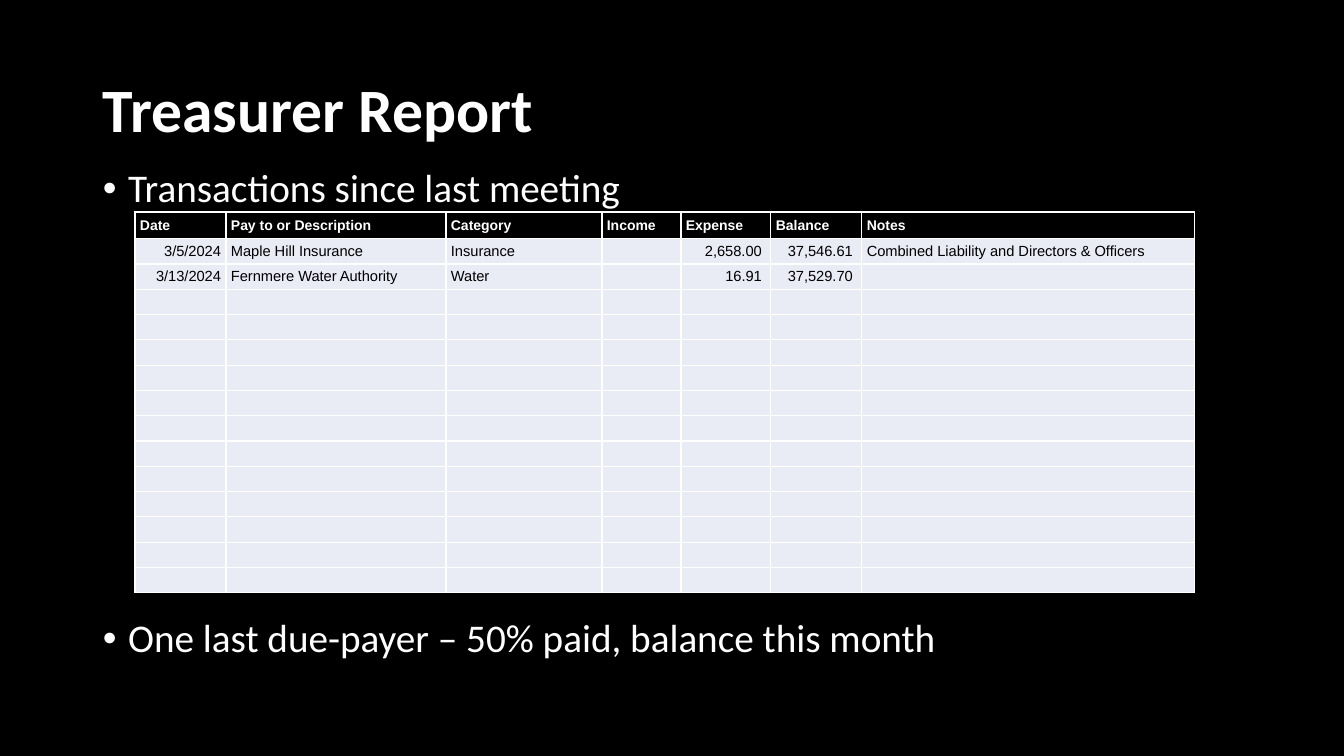
from lxml.etree import SubElement
from pptx import Presentation
from pptx.dml.color import RGBColor
from pptx.enum.text import MSO_ANCHOR, PP_ALIGN
from pptx.oxml.ns import qn
from pptx.util import Inches, Pt

TITLE = "Treasurer Report"
POINTS = [
    ("Transactions since last meeting", 10),
    ("One last due-payer – 50% paid, balance this month", 291),
]
COLS = [
    ("Date", 91, PP_ALIGN.RIGHT),
    ("Pay to or Description", 220, PP_ALIGN.LEFT),
    ("Category", 156, PP_ALIGN.LEFT),
    ("Income", 79, PP_ALIGN.RIGHT),
    ("Expense", 90, PP_ALIGN.RIGHT),
    ("Balance", 91, PP_ALIGN.RIGHT),
    ("Notes", 333, PP_ALIGN.LEFT),
]
ENTRIES = [
    ("3/5/2024", "Maple Hill Insurance", "Insurance", "", "2,658.00 ",
     "37,546.61 ", "Combined Liability and Directors & Officers"),
    ("3/13/2024", "Fernmere Water Authority", "Water", "", "16.91 ",
     "37,529.70 ", ""),
]
LINES = 14
HEAD, HEIGHT = 26, 380
INSET = 5

BLACK = RGBColor(0x00, 0x00, 0x00)
WHITE = RGBColor(0xFF, 0xFF, 0xFF)
PALE = RGBColor(0xE9, 0xEB, 0xF5)
SCALE = Inches(7.5) / 756


def px(n):
    return round(n * SCALE)


def write(para, text, size, font, color, bold=False):
    run = para.add_run()
    run.text = text
    run.font.size = Pt(size)
    run.font.name = font
    run.font.bold = bold
    run.font.color.rgb = color


def add_box(slide, x, y, w, h, anchor):
    box = slide.shapes.add_textbox(px(x), px(y), px(w), px(h))
    frame = box.text_frame
    frame.word_wrap = True
    frame.vertical_anchor = anchor
    return frame


def add_bullet(para):
    props = para._p.get_or_add_pPr()
    props.set("marL", str(Inches(0.25)))
    props.set("indent", str(-Inches(0.25)))
    SubElement(props, qn("a:buFont"), typeface="Arial")
    SubElement(props, qn("a:buChar"), char="•")


def add_edges(cell):
    props = cell._tc.get_or_add_tcPr()
    for i, side in enumerate("LRTB"):
        edge = SubElement(props, qn(f"a:ln{side}"), w=str(Pt(1)))
        fill = SubElement(edge, qn("a:solidFill"))
        SubElement(fill, qn("a:srgbClr"), val=str(WHITE))
        props.insert(i, edge)


def fill_cell(cell, text, align, head):
    cell.fill.solid()
    cell.fill.fore_color.rgb = BLACK if head else PALE
    add_edges(cell)
    cell.vertical_anchor = MSO_ANCHOR.MIDDLE
    cell.margin_left = cell.margin_right = px(INSET)
    cell.margin_top = cell.margin_bottom = px(INSET if head else 0)
    para = cell.text_frame.paragraphs[0]
    para.alignment = PP_ALIGN.LEFT if head else align
    if text:
        write(para, text, 10 if head else 10.5, "Arial",
              WHITE if head else BLACK, head)
    else:
        SubElement(para._p, qn("a:endParaRPr"), sz="1050")


def add_ledger(slide):
    wide = sum(w for _, w, _ in COLS)
    table = slide.shapes.add_table(
        LINES + 1, len(COLS), px(135), px(212), px(wide), px(HEIGHT)).table
    table.horz_banding = False
    for col, (_, w, _) in zip(table.columns, COLS):
        col.width = px(w)
    blank = ("",) * len(COLS)
    rows = [tuple(name for name, _, _ in COLS)] + ENTRIES
    rows += [blank] * (LINES - len(ENTRIES))
    for r, texts in enumerate(rows):
        table.rows[r].height = px((HEIGHT - HEAD) / LINES if r else HEAD)
        for c, text in enumerate(texts):
            fill_cell(table.cell(r, c), text, COLS[c][2], r == 0)


def main():
    deck = Presentation()
    deck.slide_width, deck.slide_height = px(1344), px(756)
    slide = deck.slides.add_slide(deck.slide_layouts[6])
    slide.background.fill.solid()
    slide.background.fill.fore_color.rgb = BLACK

    title = add_box(slide, 93, 40, 1159, 146, MSO_ANCHOR.MIDDLE).paragraphs[0]
    title.line_spacing = 0.9
    write(title, TITLE, 44, "Calibri", WHITE, True)

    body = add_box(slide, 93, 164, 1159, 551, MSO_ANCHOR.TOP)
    for i, (text, gap) in enumerate(POINTS):
        para = body.add_paragraph() if i else body.paragraphs[0]
        para.line_spacing = 0.9
        para.space_before = Pt(gap)
        add_bullet(para)
        write(para, text, 28, "Calibri", WHITE)

    add_ledger(slide)
    deck.save("out.pptx")


if __name__ == "__main__":
    main()
